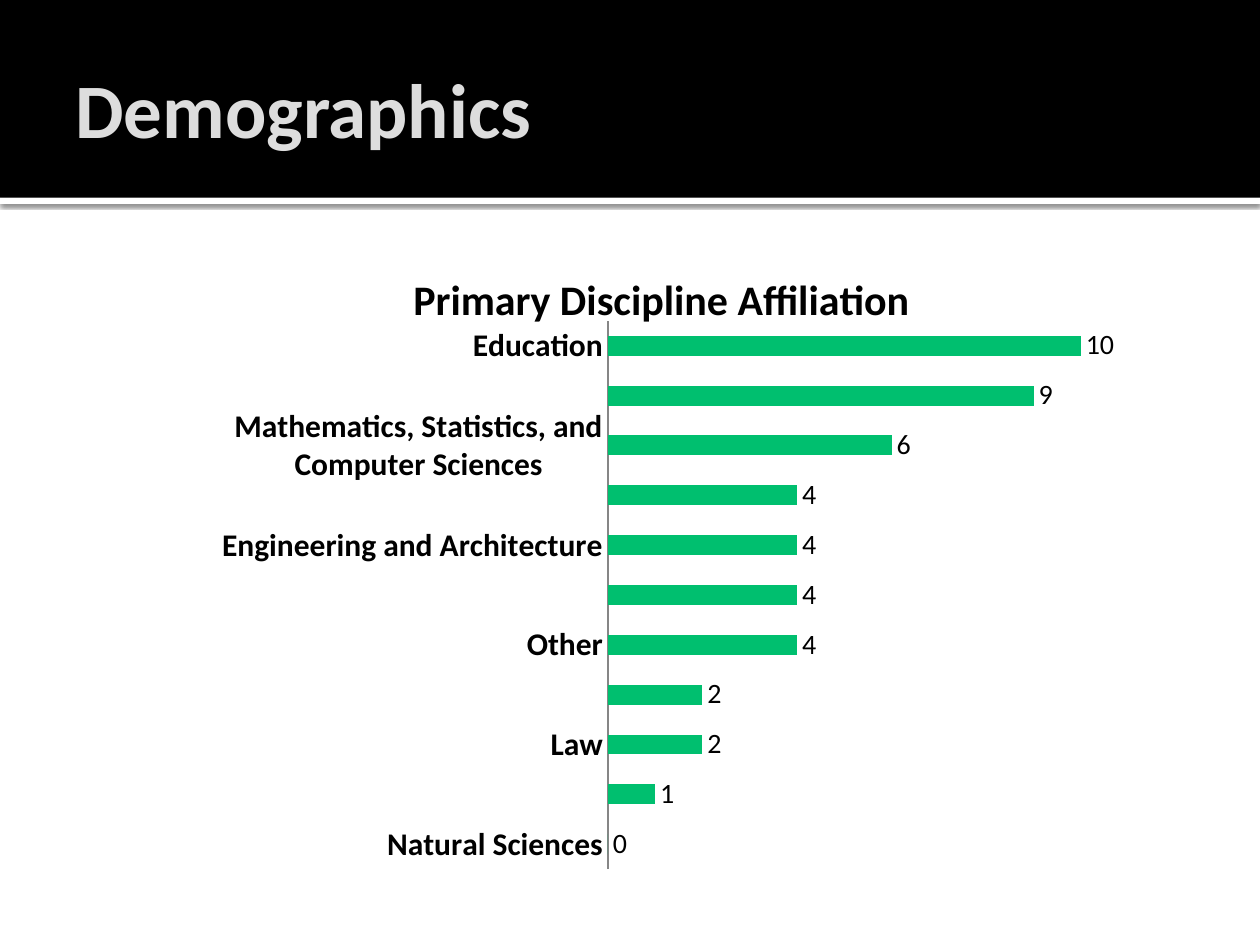
from lxml import etree
from pptx import Presentation
from pptx.chart import data as cd
from pptx.dml.color import RGBColor
from pptx.enum import chart as ce, shapes, text
from pptx.oxml import ns, parse_xml
from pptx.util import Pt

COLORS = {"black": "000000", "white": "FFFFFF", "title": "DDDDDD",
          "bar": "00BF6F", "axis": "868686"}
FONT = "Calibri"
COUNTS = [
    ("Natural Sciences", 0), ("Agriculture", 1), ("Law", 2),
    ("Humanities", 2), ("Other", 4), ("Health Sciences", 4),
    ("Engineering and Architecture", 4), ("Business and Management", 4),
    ("Mathematics, Statistics, and Computer Sciences", 6),
    ("Social Sciences", 9), ("Education", 10),
]


def tint(name):
    return RGBColor.from_string(COLORS[name])


def style(font, size, bold=False, color="black"):
    font.name, font.size, font.bold = FONT, Pt(size), bold
    font.color.rgb = tint(color)


def write(frame, words, **fmt):
    run = frame.paragraphs[0].add_run()
    run.text = words
    style(run.font, **fmt)


def band(slide, left, top, width, height, color):
    shape = slide.shapes.add_shape(
        shapes.MSO_SHAPE.RECTANGLE, Pt(left), Pt(top), Pt(width), Pt(height))
    shape.shadow.inherit = False
    shape.fill.solid()
    shape.fill.fore_color.rgb = tint(color)
    shape.line.fill.background()
    return shape


def shade(shape, blur, dist, alpha):
    effects = shape._element.spPr.find(ns.qn("a:effectLst"))
    outer = etree.SubElement(
        effects, ns.qn("a:outerShdw"), blurRad=str(Pt(blur)),
        dist=str(Pt(dist)), dir="5400000", algn="tl", rotWithShape="0")
    color = etree.SubElement(outer, ns.qn("a:srgbClr"), val=COLORS["black"])
    etree.SubElement(color, ns.qn("a:alpha"), val=str(alpha * 1000))


def header(slide, left, top, width, height):
    strip = band(slide, left, top + height, width, 3.6, "white")
    shade(strip, blur=2.5, dist=0.8, alpha=60)
    band(slide, left, top, width, height, "black")
    box = slide.shapes.add_textbox(
        Pt(left + 36), Pt(top + 12.24), Pt(width - 72), Pt(98.64))
    frame = box.text_frame
    frame.word_wrap = True
    frame.vertical_anchor = text.MSO_ANCHOR.MIDDLE
    frame.margin_left = Pt(7.2)
    frame.margin_right = frame.margin_top = frame.margin_bottom = Pt(3.6)
    write(frame, "Demographics", size=44, bold=True, color="title")


def place(chart, x, y, w, h):
    area = chart._chartSpace.chart.plotArea
    for old in area.findall(ns.qn("c:layout")):
        area.remove(old)
    area.insert(0, parse_xml(
        f'<c:layout {ns.nsdecls("c")}><c:manualLayout>'
        '<c:layoutTarget val="inner"/><c:xMode val="edge"/>'
        f'<c:yMode val="edge"/><c:x val="{x}"/><c:y val="{y}"/>'
        f'<c:w val="{w}"/><c:h val="{h}"/></c:manualLayout></c:layout>'))


def bars(slide, left, top, width, height):
    names, counts = zip(*COUNTS)
    data = cd.CategoryChartData()
    data.categories = names
    data.add_series("Series 1", counts)
    chart = slide.shapes.add_chart(
        ce.XL_CHART_TYPE.BAR_CLUSTERED, Pt(left), Pt(top), Pt(width),
        Pt(height), data).chart
    style(chart.font, 10)
    chart.has_legend = False
    chart.has_title = True
    write(chart.chart_title.text_frame, "Primary Discipline Affiliation",
          size=24, bold=True)
    place(chart, 0.45, 0.12, 0.53, 0.86)

    axis = chart.category_axis
    axis.major_tick_mark = axis.minor_tick_mark = ce.XL_TICK_MARK.NONE
    axis.format.line.color.rgb = tint("axis")
    style(axis.tick_labels.font, 18, bold=True)
    scale = chart.value_axis
    scale.minimum_scale, scale.maximum_scale = 0, 12
    scale.has_major_gridlines = False
    scale.visible = False

    plot = chart.plots[0]
    plot.gap_width = 150
    plot.vary_by_categories = False
    series = plot.series[0]
    series.format.fill.solid()
    series.format.fill.fore_color.rgb = tint("bar")
    labels = series.data_labels
    labels.show_value = True
    labels.position = ce.XL_LABEL_POSITION.OUTSIDE_END
    style(labels.font, 16)


def main():
    deck = Presentation()
    deck.slide_width, deck.slide_height = Pt(720), Pt(540)
    slide = deck.slides.add_slide(deck.slide_layouts[6])
    header(slide, 0, 0, 720, 113)
    bars(slide, 72, 139.68, 612, 364.32)
    deck.save("out.pptx")


if __name__ == "__main__":
    main()
